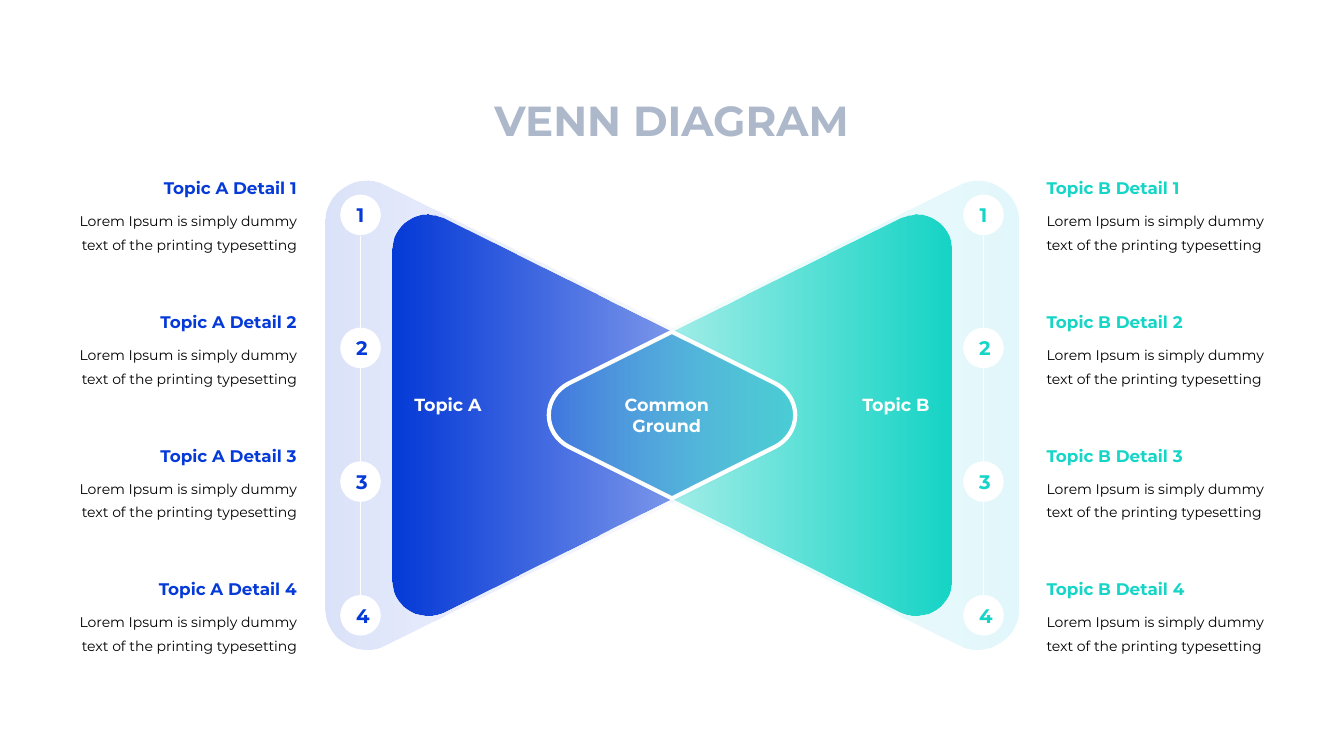
from dataclasses import dataclass

from lxml.etree import SubElement
from pptx import Presentation
from pptx.dml.color import RGBColor
from pptx.enum.shapes import MSO_CONNECTOR, MSO_SHAPE
from pptx.enum.text import MSO_ANCHOR, MSO_AUTO_SIZE, PP_ALIGN
from pptx.oxml.ns import qn
from pptx.util import Pt

PX = 6350
WIDTH, HEIGHT = 1920, 1080
MIDDLE = 593
ROWS = 4
ROW_STEP = 191
BODY = "Lorem Ipsum is simply dummy text of the printing typesetting"
TRIANGLE = "MCCLCCLCC"
LENS = "MLCCLLCC"
COMMANDS = {"M": ("a:moveTo", 1), "L": ("a:lnTo", 1), "C": ("a:cubicBezTo", 3)}


@dataclass(frozen=True)
class Theme:
    font: str = "Montserrat"
    white: str = "FFFFFF"
    black: str = "000000"
    gray: str = "ADB9CA"
    blue: str = "053AD8"
    violet: str = "7A7AF7"
    teal: str = "15D5C6"
    sky: str = "39C9EA"
    title_size: float = 30
    number_size: float = 14
    label_size: float = 12.5
    heading_size: float = 12
    body_size: float = 10


def mirror_down(half):
    upper = [(x, MIDDLE - rise) for x, rise in half]
    lower = [(x, MIDDLE + rise) for x, rise in reversed(half) if rise]
    return upper + lower


def mirror_across(points):
    return [(WIDTH - x, y) for x, y in points]


def write_text(frame, text, *, font, size, color, bold=True,
               align=PP_ALIGN.LEFT, spacing=None):
    frame.word_wrap = True
    paragraph = frame.paragraphs[0]
    paragraph.alignment = align
    if spacing:
        paragraph.line_spacing = Pt(spacing)
    run = paragraph.add_run()
    run.text = text
    run.font.name = font
    run.font.size = Pt(size)
    run.font.bold = bold
    run.font.color.rgb = RGBColor.from_string(color)


class SlideBuilder:
    def __init__(self, slide, theme):
        self.slide = slide
        self.theme = theme

    def text(self, left, top, width, height, text, inset=(4, 4), **style):
        box = self.slide.shapes.add_textbox(*(v * PX for v in (left, top, width, height)))
        frame = box.text_frame
        frame.margin_left = frame.margin_right = inset[0] * PX
        frame.margin_top = frame.margin_bottom = inset[1] * PX
        write_text(frame, text, font=self.theme.font, **style)
        frame.auto_size = MSO_AUTO_SIZE.SHAPE_TO_FIT_TEXT

    def outline(self, pattern, points, rise):
        left, right = (bound(x for x, _ in points) for bound in (min, max))
        top, bottom = MIDDLE - rise, MIDDLE + rise
        builder = self.slide.shapes.build_freeform(left, top, scale=PX)
        builder.add_line_segments([(right, bottom)], close=True)
        shape = builder.convert_to_shape()
        shape.shadow.inherit = False
        trace = next(shape._element.spPr.iter(qn("a:path")))
        unit_x = int(trace.get("w")) / (right - left)
        unit_y = int(trace.get("h")) / (bottom - top)
        for command in list(trace):
            trace.remove(command)
        remaining = iter(points)
        for letter in pattern:
            tag, count = COMMANDS[letter]
            command = SubElement(trace, qn(tag))
            for _ in range(count):
                x, y = next(remaining)
                SubElement(command, qn("a:pt"), x=str(round((x - left) * unit_x)),
                           y=str(round((y - top) * unit_y)))
        SubElement(trace, qn("a:close"))
        return shape

    def gradient(self, points, rise, stops):
        shape = self.outline(TRIANGLE, points, rise)
        shape.line.fill.background()
        shape.fill.gradient()
        shape.fill.gradient_angle = 0
        for position, (stop, (color, _)) in enumerate(zip(shape.fill.gradient_stops, stops)):
            stop.position = position
            stop.color.rgb = RGBColor.from_string(color)
        colors = shape._element.spPr.iter(qn("a:srgbClr"))
        for element, (_, opacity) in zip(list(colors), stops):
            SubElement(element, qn("a:alpha")).set("val", str(opacity * 1000))

    def ring(self, points, rise):
        shape = self.outline(LENS, points, rise)
        shape.fill.background()
        shape.line.color.rgb = RGBColor.from_string(self.theme.white)
        shape.line.width = Pt(3)

    def vertical_line(self, x, top, bottom):
        line = self.slide.shapes.add_connector(
            MSO_CONNECTOR.STRAIGHT, x * PX, top * PX, x * PX, bottom * PX)
        line.line.color.rgb = RGBColor.from_string(self.theme.white)
        line.line.width = Pt(1)
        SubElement(line._element.spPr, qn("a:effectLst"))

    def number(self, center, top, number, color, size=58):
        circle = self.slide.shapes.add_shape(
            MSO_SHAPE.OVAL, (center - size // 2) * PX, top * PX, size * PX, size * PX)
        circle.shadow.inherit = False
        circle.fill.solid()
        circle.fill.fore_color.rgb = RGBColor.from_string(self.theme.white)
        circle.line.fill.background()
        circle.text_frame.vertical_anchor = MSO_ANCHOR.MIDDLE
        write_text(circle.text_frame, str(number), font=self.theme.font,
                   size=self.theme.number_size, color=color, align=PP_ALIGN.CENTER)

    def detail(self, edge, row, heading, color, align):
        def place(top, width, height, text, **style):
            left = edge - width if align == PP_ALIGN.RIGHT else edge
            self.text(left, top + row * ROW_STEP, width, height, text, align=align, **style)

        place(290, 357, 73, BODY, size=self.theme.body_size, color=self.theme.black,
              bold=False, spacing=17)
        place(250, 346, 37, heading, size=self.theme.heading_size, color=color)


def main():
    presentation = Presentation()
    presentation.slide_width = WIDTH * PX
    presentation.slide_height = HEIGHT * PX
    theme = Theme()
    builder = SlideBuilder(presentation.slides.add_slide(presentation.slide_layouts[6]), theme)

    halo = mirror_down([
        (465, 277), (465, 296), (474, 313), (490, 324), (507, 337), (531, 339), (550, 329),
        (1106, 53), (1126, 42), (1137, 22), (1137, 0)])
    topic_half = [
        (561, 236), (561, 252), (568, 268), (583, 278), (597, 288), (617, 290), (634, 282),
        (1108, 45), (1125, 36), (1136, 19), (1136, 0)]
    topic = mirror_down(topic_half)
    lens_right = mirror_down([(WIDTH // 2, 119)] + topic_half[-4:])
    lens = lens_right + mirror_across(lens_right)[-2:0:-1]

    builder.gradient(halo, 335, [(theme.blue, 15), (theme.violet, 0)])
    builder.gradient(mirror_across(halo), 335, [(theme.teal, 0), (theme.sky, 15)])
    builder.text(678, 128, 563, 88, "VENN DIAGRAM", inset=(14, 7), size=theme.title_size,
                 color=theme.gray, align=PP_ALIGN.CENTER)
    builder.gradient(topic, 286, [(theme.blue, 100), (theme.blue, 30)])
    builder.gradient(mirror_across(topic), 286, [(theme.teal, 10), (theme.teal, 100)])

    for left, width, height, label, align in (
        (846, 213, 69, "Common Ground", PP_ALIGN.CENTER),
        (1159, 173, 39, "Topic B", PP_ALIGN.RIGHT),
        (588, 173, 39, "Topic A", PP_ALIGN.LEFT),
    ):
        builder.text(left, 559, width, height, label, size=theme.label_size,
                     color=theme.white, align=align)

    for color, center in ((theme.blue, 515), (theme.teal, 1405)):
        builder.vertical_line(center, 337, 850)
        for row in range(ROWS):
            builder.number(center, 278 + row * 572 // 3, row + 1, color)
    builder.ring(lens, 119)

    for name, color, edge, align in (
        ("A", theme.blue, 428, PP_ALIGN.RIGHT),
        ("B", theme.teal, 1491, PP_ALIGN.LEFT),
    ):
        for row in range(ROWS):
            builder.detail(edge, row, f"Topic {name} Detail {row + 1}", color, align)

    presentation.save("out.pptx")


if __name__ == "__main__":
    main()
